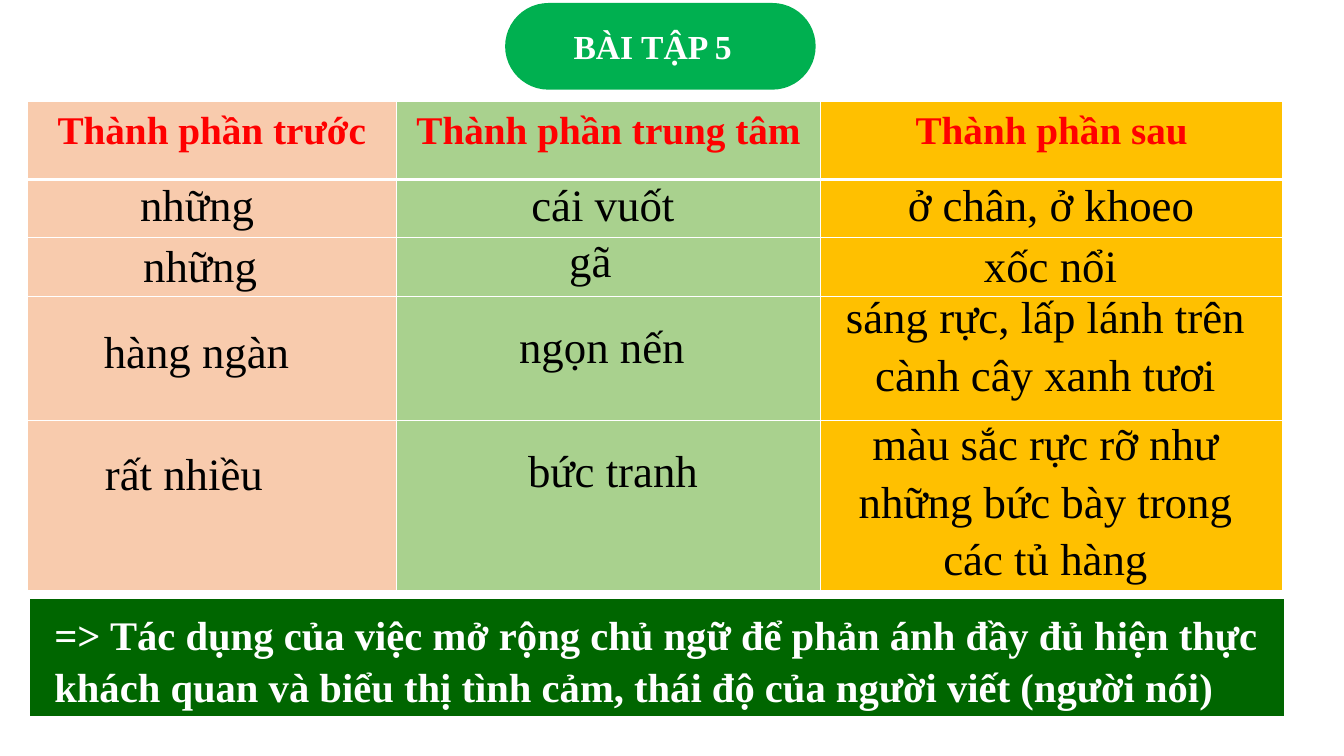
from lxml import etree
from pptx import Presentation
from pptx.dml.color import RGBColor
from pptx.enum import shapes, text
from pptx.oxml import ns
from pptx.util import Inches, Pt

FONT = "Times New Roman"
WHITE, BLACK, RED = "FFFFFF", "000000", "FF0000"
GREEN, DARK_GREEN = "00B050", "006600"

TITLE = "BÀI TẬP 5"
CONCLUSION = ("=> Tác dụng của việc mở rộng chủ ngữ để\u00a0phản ánh đầy đủ hiện thực "
              "khách quan và biểu thị tình cảm, thái độ của người viết (người nói)")
HEADINGS = ["Thành phần trước", "Thành phần trung tâm", "Thành phần sau"]
COLUMN_FILLS = ["F8CBAD", "A9D18E", "FFC000"]
COLUMN_WIDTHS = [3.66, 4.21, 4.58]
ROW_HEIGHTS = [0.77, 0.58, 0.58, 1.23, 1.69]

# Answers laid over the table: text, left, top, width, height
ANSWERS = [
    ("những", 1.07, 1.67, 1.77, 0.64),
    ("những", 1.1, 2.27, 1.77, 0.64),
    ("hàng ngàn", 0.76, 3.13, 2.38, 0.64),
    ("rất nhiều", 0.76, 4.34, 2.13, 0.64),
    ("cái vuốt", 4.92, 1.67, 2.12, 0.64),
    ("gã", 5.22, 2.22, 1.27, 0.68),
    ("ngọn nến", 4.92, 3.08, 2.1, 0.64),
    ("bức tranh", 4.77, 4.31, 2.62, 0.64),
    ("ở chân, ở khoeo", 8.9, 1.67, 3.05, 0.64),
    ("xốc nổi", 9.38, 2.27, 2.08, 0.64),
    ("sáng rực, lấp lánh trên cành cây xanh tươi", 8.09, 2.78, 4.56, 1.25),
    ("màu sắc rực rỡ như những bức bày trong các tủ hàng", 8.09, 4.04, 4.56, 1.83),
]


def paint(fill, color):
    fill.solid()
    fill.fore_color.rgb = RGBColor.from_string(color)


def write(frame, words, size, color, bold=False, align=text.PP_ALIGN.CENTER, spaced=True):
    para = frame.paragraphs[0]
    para.text = words
    para.alignment = align
    if spaced:
        para.line_spacing, para.space_after = 1.07, Pt(8)
    para.font.name, para.font.size, para.font.bold = FONT, Pt(size), bold
    para.font.color.rgb = RGBColor.from_string(color)


def add_text(page, words, left, top, width, height, size, color, wrap=True, **style):
    box = page.shapes.add_textbox(*map(Inches, (left, top, width, height)))
    box.text_frame.word_wrap = wrap
    write(box.text_frame, words, size, color, **style)


def add_borders(cell, bottom_width):
    properties = cell._tc.get_or_add_tcPr()
    widths = {"a:lnL": 1, "a:lnR": 1, "a:lnT": 1, "a:lnB": bottom_width}
    for place, (side, width) in enumerate(widths.items()):
        line = etree.Element(ns.qn(side), w=str(Pt(width)))
        solid = etree.SubElement(line, ns.qn("a:solidFill"))
        etree.SubElement(solid, ns.qn("a:srgbClr"), val=WHITE)
        properties.insert(place, line)


def add_grid(page, left, top, widths, heights, fills):
    table = page.shapes.add_table(
        len(heights), len(widths), Inches(left), Inches(top),
        Inches(sum(widths)), Inches(sum(heights))).table
    for column, width in zip(table.columns, widths):
        column.width = Inches(width)
    for number, (row, height) in enumerate(zip(table.rows, heights)):
        row.height = Inches(height)
        for cell, color in zip(row.cells, fills):
            paint(cell.fill, color)
            add_borders(cell, 3 if number == 0 else 1)
    return table


def main():
    deck = Presentation()
    deck.slide_width, deck.slide_height = Inches(13.33), Inches(7.5)
    page = deck.slides.add_slide(deck.slide_layouts[6])

    # Main table with its headings
    table = add_grid(page, 0.27, 1.01, COLUMN_WIDTHS, ROW_HEIGHTS, COLUMN_FILLS)
    for cell, heading in zip(table.rows[0].cells, HEADINGS):
        cell.margin_left = cell.margin_right = Inches(0.05)
        write(cell.text_frame, heading, 28, RED, bold=True)

    # Answers
    for answer, *place in ANSWERS:
        add_text(page, answer, *place, 32, BLACK)

    # Title pill
    pill = page.shapes.add_shape(shapes.MSO_SHAPE.ROUNDED_RECTANGLE,
                                 *map(Inches, (5.01, 0.03, 3.08, 0.86)))
    pill.adjustments[0] = 0.5
    pill.shadow.inherit = False
    paint(pill.fill, GREEN)
    pill.line.fill.background()
    add_text(page, TITLE, 5.59, 0.21, 1.79, 0.5, 24, WHITE, wrap=False, bold=True,
             align=text.PP_ALIGN.JUSTIFY, spaced=False)

    # Conclusion band
    add_grid(page, 0.29, 5.94, [12.45], [1.18], [DARK_GREEN])
    add_text(page, CONCLUSION, 0.44, 5.97, 12.21, 1.15, 29, WHITE, bold=True,
             align=text.PP_ALIGN.LEFT)

    deck.save("out.pptx")


if __name__ == "__main__":
    main()
